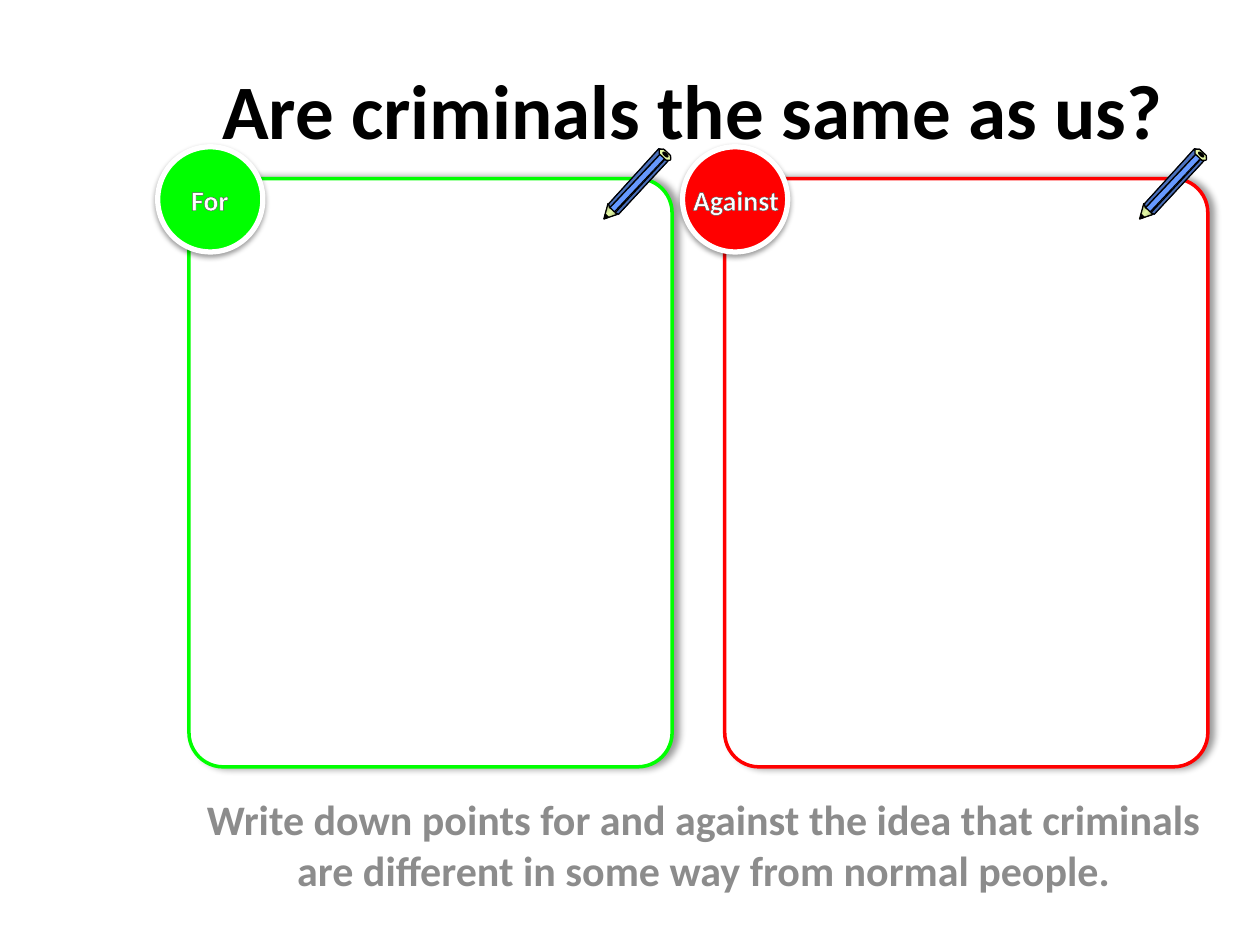
from lxml import etree
from pptx import Presentation
from pptx import util as u
from pptx.dml.color import RGBColor
from pptx.enum import shapes, text
from pptx.oxml import parse_xml
from pptx.oxml.ns import nsdecls, qn

BLACK = RGBColor(0x00, 0x00, 0x00)
WHITE = RGBColor(0xFF, 0xFF, 0xFF)
GREY = RGBColor(0x8C, 0x8C, 0x8C)
EDGE = RGBColor(0x59, 0x59, 0x59)
GREEN = RGBColor(0x00, 0xFF, 0x00)
RED = RGBColor(0xFF, 0x00, 0x00)
BLUE = RGBColor(0x66, 0x99, 0xFF)
NAVY = RGBColor(0x2F, 0x47, 0x76)
CREAM = RGBColor(0xE5, 0xF9, 0xA5)
OLIVE = RGBColor(0x6A, 0x73, 0x4C)

KIND = shapes.MSO_SHAPE
PANEL_LEFT, PANEL_PITCH = 3.81, 10.8
PENCIL_TILT = 313.3
TIP_TILT = 223.3


class SlideBuilder:
    font = "Calibri"

    def __init__(self, slide):
        self.s = slide

    def paint(self, sp, fill, line, width):
        sp.shadow.inherit = False
        sp.fill.solid()
        sp.fill.fore_color.rgb = fill
        sp.line.color.rgb = line
        sp.line.width = u.Pt(width)
        return sp

    def shape(self, kind, x, y, w, h, fill, line=BLACK, width=0.75, rot=0, adj=None):
        sp = self.s.shapes.add_shape(kind, u.Cm(x), u.Cm(y), u.Cm(w), u.Cm(h))
        if adj is not None:
            sp.adjustments[0] = adj
        sp.rotation = rot
        return self.paint(sp, fill, line, width)

    def outline(self, points, fill):
        pts = [(u.Cm(x), u.Cm(y)) for x, y in points]
        builder = self.s.shapes.build_freeform(*pts[0])
        builder.add_line_segments(pts[1:], close=True)
        return self.paint(builder.convert_to_shape(), fill, BLACK, 0.75)

    def gradient(self, sp, colors, angle):
        step = 100000 // (len(colors) - 1)
        stops = "".join(
            f'<a:gs pos="{i * step}"><a:srgbClr val="{c}"/></a:gs>'
            for i, c in enumerate(colors))
        props = sp.element.spPr
        props.replace(props.find(qn("a:solidFill")), parse_xml(
            f'<a:gradFill {nsdecls("a")} rotWithShape="1"><a:gsLst>{stops}</a:gsLst>'
            f'<a:lin ang="{angle * 60000}" scaled="0"/></a:gradFill>'))

    def shadow(self, sp, alpha, blur, dist, angle):
        effects = sp.element.spPr.find(qn("a:effectLst"))
        shade = etree.SubElement(
            effects, qn("a:outerShdw"), blurRad=str(u.Pt(blur)),
            dist=str(u.Pt(dist)), dir=str(angle * 60000), rotWithShape="0")
        color = etree.SubElement(shade, qn("a:srgbClr"), val=str(BLACK))
        etree.SubElement(color, qn("a:alpha"), val=str(alpha * 1000))

    def text(self, words, x, y, w, h, size, color, centred=True, middle=False, edge=None):
        tf = self.s.shapes.add_textbox(u.Cm(x), u.Cm(y), u.Cm(w), u.Cm(h)).text_frame
        tf.word_wrap = True
        tf.vertical_anchor = text.MSO_ANCHOR.MIDDLE if middle else text.MSO_ANCHOR.TOP
        p = tf.paragraphs[0]
        p.alignment = text.PP_ALIGN.CENTER if centred else text.PP_ALIGN.LEFT
        r = p.add_run()
        r.text = words
        r.font.name, r.font.size, r.font.bold = self.font, u.Pt(size), True
        r.font.color.rgb = color
        if edge is not None:
            r.font.fill.solid()
            r.font.color.rgb = color
            r.font._element.insert(0, parse_xml(
                f'<a:ln {nsdecls("a")} w="{u.Pt(0.5)}"><a:solidFill>'
                f'<a:srgbClr val="{edge}"/></a:solidFill></a:ln>'))

    def panel(self, x, color):
        sp = self.shape(KIND.ROUNDED_RECTANGLE, x, 3.6, 9.74, 11.86, WHITE, color, 2, adj=0.071)
        self.shadow(sp, 40, 4, 3, 0)

    def badge(self, x, color):
        sp = self.shape(KIND.OVAL, x, 2.96, 2.12, 2.12, color, WHITE, 3)
        self.shadow(sp, 38, 3.1, 1.6, 90)

    def pencil(self, x):
        tip = self.shape(KIND.ISOSCELES_TRIANGLE, x + 8.31, 4.17, 0.3, 0.28, CREAM, rot=TIP_TILT)
        self.gradient(tip, [OLIVE, CREAM, OLIVE], 0)
        self.shape(KIND.RECTANGLE, x + 8.28, 3.58, 1.6, 0.13, BLUE, rot=PENCIL_TILT)
        sides = (
            [(8.48, 4.19), (8.46, 4.11), (9.47, 3.0), (9.58, 3.02)],
            [(8.59, 4.29), (8.66, 4.32), (9.7, 3.2), (9.68, 3.12)],
        )
        for side in sides:
            sp = self.outline([(x + dx, y) for dx, y in side], BLUE)
            self.gradient(sp, [BLUE, NAVY], 43)
        self.shape(KIND.OCTAGON, x + 9.53, 2.97, 0.13, 0.3, CREAM, rot=PENCIL_TILT, adj=0.42)
        self.shape(KIND.OVAL, x + 9.58, 3.05, 0.05, 0.13, BLACK, rot=PENCIL_TILT)
        self.shape(KIND.ISOSCELES_TRIANGLE, x + 8.36, 4.34, 0.08, 0.08, BLACK, rot=TIP_TILT)


def main():
    prs = Presentation()
    prs.slide_width, prs.slide_height = u.Cm(25.4), u.Cm(19.05)
    b = SlideBuilder(prs.slides.add_slide(prs.slide_layouts[6]))

    b.text("Are criminals the same as us?", 3.18, 0.15, 21.59, 4.09, 44, BLACK, middle=True)
    b.text("Write down points for and against the idea that criminals "
           "are different in some way from normal people.",
           3.81, 15.88, 20.75, 2.54, 24, GREY)

    lefts = [PANEL_LEFT, PANEL_LEFT + PANEL_PITCH]
    for x, color in zip(lefts, (GREEN, RED)):
        b.panel(x, color)
    for x, color in ((3.18, GREEN), (13.76, RED)):
        b.badge(x, color)
    for words, x, w in (("For", 3.6, 1.57), ("Against", 13.72, 2.59)):
        b.text(words, x, 3.56, w, 0.94, 16, WHITE, centred=False, edge=EDGE)
    for x in lefts:
        b.pencil(x)

    prs.save("out.pptx")


if __name__ == "__main__":
    main()
